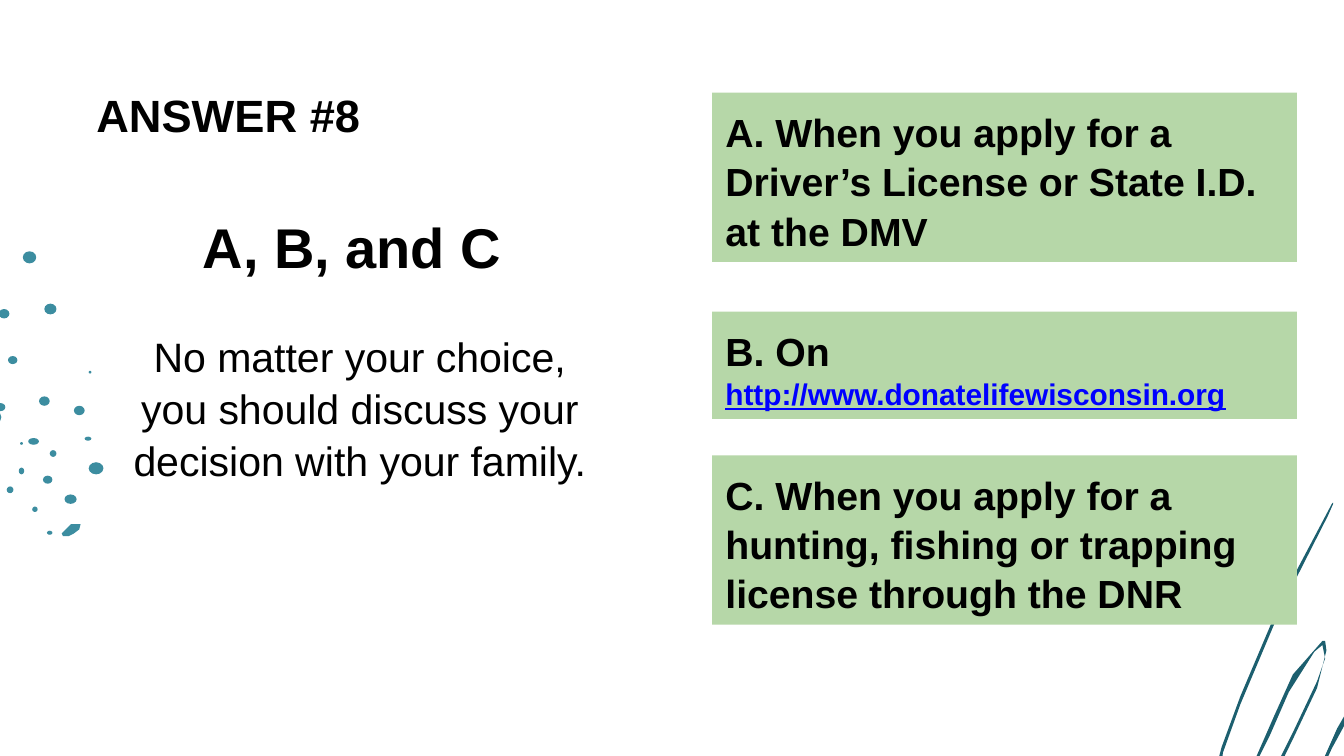
from pptx import Presentation
from pptx import util as u
from pptx.dml.color import RGBColor
from pptx.enum import shapes, text

COLORS = {"dots": "3C8DA0", "scribble": "1C5F6F", "answer": "B6D7A8",
          "ink": "000000", "link": "0000FF"}
UNIT = u.Cm(0.0254)  # grid step of the decorations


def paint(shape, color):
    shape.shadow.inherit = False
    shape.fill.solid()
    shape.fill.fore_color.rgb = RGBColor.from_string(COLORS[color])
    shape.line.fill.background()


def write(para, words, size=21, bold=True, color="ink", underline=None,
          align=text.PP_ALIGN.LEFT, before=0, spacing=1.05):
    para.alignment = align
    para.line_spacing = spacing
    para.space_before = u.Pt(before)
    span = para.add_run()
    span.text = words
    span.font.name = "Arial"
    span.font.size = u.Pt(size)
    span.font.bold = bold
    span.font.underline = underline
    span.font.color.rgb = RGBColor.from_string(COLORS[color])


deck = Presentation()
deck.slide_width, deck.slide_height = u.Cm(25.4), u.Cm(14.29)
page = deck.slides.add_slide(deck.slide_layouts[5])

# Spatter of dots at the left edge: left, top, width, height in grid steps
dots = [
    (-12, 305, 13, 11), (15, 329, 2, 2), (14, 348, 4, 5), (24, 377, 4, 4),
    (35, 395, 4, 3), (48, 368, 9, 7), (32, 354, 7, 6), (5, 362, 5, 5),
    (37, 335, 5, 5), (21, 326, 8, 5), (29, 295, 8, 7), (-3, 300, 7, 6),
    (6, 265, 7, 6), (-1, 230, 8, 7), (66, 276, 2, 2), (55, 302, 8, 7),
    (63, 325, 5, 3), (66, 344, 11, 9), (33, 226, 9, 8), (17, 187, 10, 9),
]
for place in dots:
    dot = page.shapes.add_shape(shapes.MSO_SHAPE.OVAL, *[UNIT * n for n in place])
    paint(dot, "dots")

# Leaf-shaped drop and scribble: outline points in grid steps
leaf = [(56, 390), (53, 390), (50, 393), (46, 397), (47, 399), (51, 399),
        (55, 397), (59, 394), (60, 390)]
scribble = [
    # outer edge
    (992, 374), (991, 375), (954, 445), (923, 518), (909, 556), (905, 571),
    (908, 584), (909, 586), (919, 588), (929, 579), (945, 547), (959, 515),
    (978, 485), (984, 480), (986, 490), (980, 507), (963, 543), (944, 581),
    (935, 599), (929, 614), (931, 637), (933, 638), (946, 639), (958, 630),
    (967, 612), (974, 594), (991, 557), (1010, 522), (1031, 493), (1038, 490),
    (1040, 518), (1027, 547), (1011, 575), (991, 612), (974, 651), (971, 667),
    (974, 671), (982, 672), (995, 661), (1006, 644), (1022, 607), (1060, 531),
    (1071, 520), (1080, 521), (1081, 522), (1082, 538), (1077, 556),
    (1041, 623), (1021, 656), (1011, 672), (1007, 688), (1012, 696),
    (1031, 698), (1044, 685), (1054, 666), (1093, 586), (1102, 567),
    # inner edge, running back
    (1102, 565), (1099, 565), (1061, 644), (1051, 664), (1042, 683),
    (1028, 696), (1014, 694), (1012, 679), (1020, 663), (1040, 631),
    (1076, 565), (1082, 548), (1086, 531), (1082, 519), (1081, 518),
    (1069, 518), (1059, 527), (1049, 543), (1030, 580), (1014, 618),
    (996, 654), (984, 668), (977, 669), (974, 663), (976, 656), (980, 646),
    (988, 627), (1007, 589), (1024, 559), (1043, 501), (1040, 487),
    (1038, 486), (1014, 509), (995, 542), (963, 614), (940, 637), (933, 635),
    (930, 630), (931, 617), (936, 603), (945, 585), (963, 548), (980, 512),
    (987, 484), (986, 477), (984, 477), (962, 502), (948, 533), (934, 565),
    (926, 580), (913, 586), (911, 584), (908, 575), (910, 560), (923, 524),
    (953, 453), (988, 384), (992, 375),
]
for outline, color in [(leaf, "dots"), (scribble, "scribble")]:
    builder = page.shapes.build_freeform(*outline[0], scale=UNIT)
    builder.add_line_segments(outline[1:], close=True)
    paint(builder.convert_to_shape(), color)

# Title
title = page.shapes.title
title.left, title.top = u.Cm(1.57), u.Cm(1.37)
title.width, title.height = u.Cm(22.66), u.Cm(1.6)
title.text_frame.vertical_anchor = text.MSO_ANCHOR.MIDDLE
title.text_frame.auto_size = text.MSO_AUTO_SIZE.NONE
write(title.text_frame.paragraphs[0], "ANSWER #8", size=24.2, spacing=1.0)

# Verdict
verdict = page.shapes.add_textbox(u.Cm(2.24), u.Cm(3.71), u.Cm(9.12), u.Cm(9.75))
verdict.text_frame.word_wrap = True
write(verdict.text_frame.paragraphs[0], "A, B, and C ", size=30,
      align=text.PP_ALIGN.CENTER)
write(verdict.text_frame.add_paragraph(),
      "No matter your choice, you should discuss your decision with your family.",
      size=22, bold=False, align=text.PP_ALIGN.CENTER, before=26.5)

# Answer cards: top, height, text, web address
answers = [
    (1.75, 3.2, "A. When you apply for a Driver’s License or State I.D. at the DMV", ""),
    (5.89, 2.03, "B. On ", "http://www.donatelifewisconsin.org"),
    (8.61, 3.2, "C. When you apply for a hunting, fishing or trapping license "
     "through the DNR", ""),
]
for top, height, words, address in answers:
    card = page.shapes.add_shape(shapes.MSO_SHAPE.RECTANGLE, u.Cm(13.46), u.Cm(top),
                                 u.Cm(11.05), u.Cm(height))
    paint(card, "answer")
    card.text_frame.word_wrap = True
    card.text_frame.vertical_anchor = text.MSO_ANCHOR.TOP
    para = card.text_frame.paragraphs[0]
    write(para, words)
    if address:
        write(para, address, size=16, color="link", underline=True)

# Insets, the same on every side
for box in page.shapes:
    if box.has_text_frame and box.text_frame.text:
        frame = box.text_frame
        frame.margin_left = frame.margin_right = u.Cm(0.25)
        frame.margin_top = frame.margin_bottom = u.Cm(0.25)

deck.save("out.pptx")
